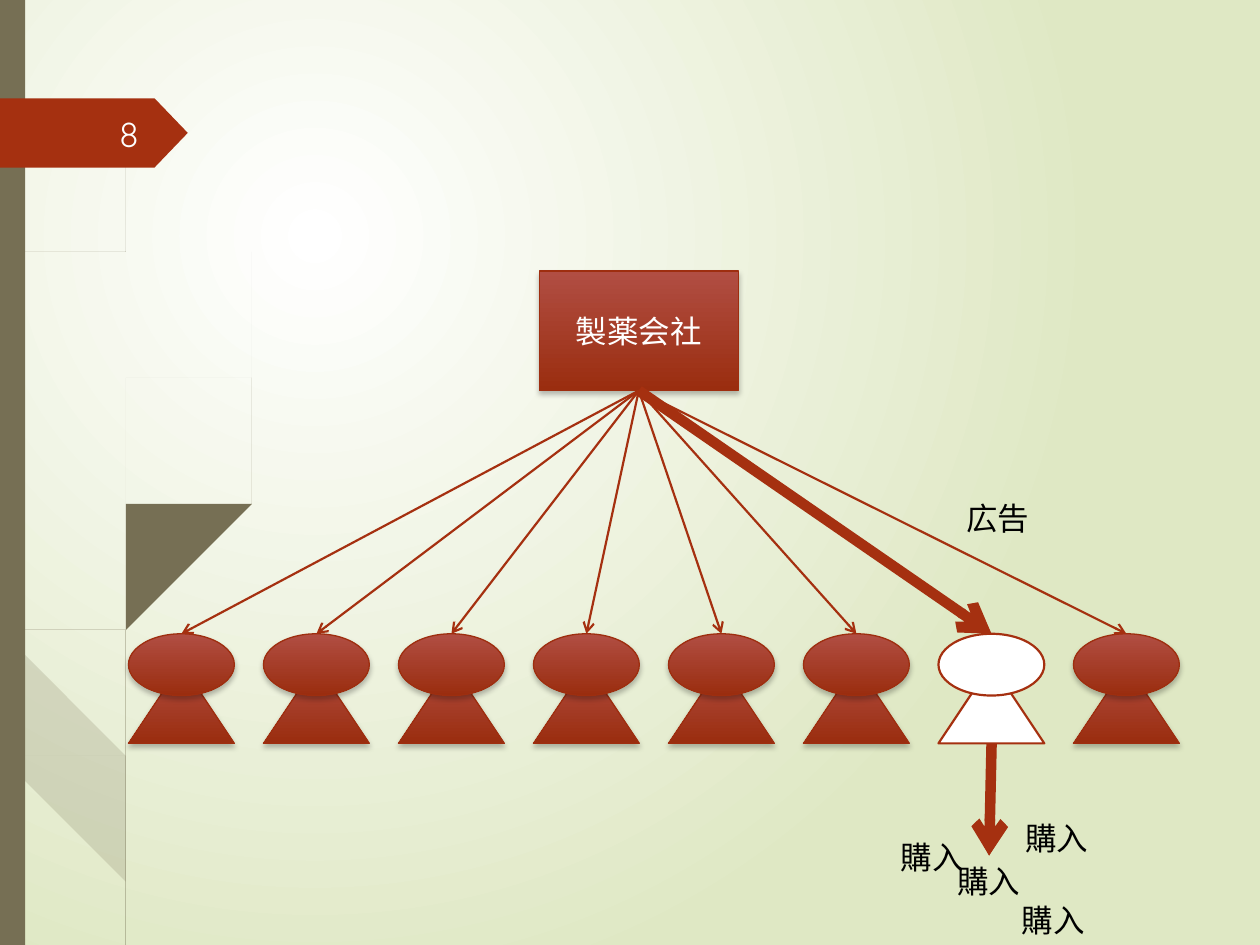
import lxml.etree
import pptx
import pptx.dml.color
import pptx.enum.dml
import pptx.enum.shapes
import pptx.enum.text
import pptx.oxml
import pptx.oxml.ns
import pptx.util

THEME = {
    "font": "Quicksand", "body": 18, "number": 20,
    "paper": "FFFFFF", "edge": "DFE8C4", "olive": "766F54", "accent": "A53010",
    "top": "B14E43", "bottom": "9A2D0F", "outline": "9E2E0F",
    "ink": "000000", "light": "FEFFFF",
}
PRESET = pptx.enum.shapes.MSO_SHAPE
ALIGN = pptx.enum.text.PP_ALIGN
qn = pptx.oxml.ns.qn
color = {name: pptx.dml.color.RGBColor.from_string(value)
         for name, value in THEME.items() if name not in ("font", "body", "number")}
inch = pptx.util.Inches

presentation = pptx.Presentation()
presentation.slide_width = inch(10)
presentation.slide_height = inch(7.5)
slide = presentation.slides.add_slide(presentation.slide_layouts[6])


def paint(shape, fill, line=None, width=0.75):
    shape.shadow.inherit = False
    if fill == "gradient":
        shape.fill.gradient()
        shape.fill.gradient_angle = 270
        for stop, name in zip(shape.fill.gradient_stops, ("top", "bottom")):
            stop.color.rgb = color[name]
        effects = shape._element.spPr.find(qn("a:effectLst"))
        shadow = lxml.etree.SubElement(effects, qn("a:outerShdw"), blurRad="38100",
                                       dist="25400", dir="5400000", rotWithShape="0")
        black = lxml.etree.SubElement(shadow, qn("a:srgbClr"), val=THEME["ink"])
        lxml.etree.SubElement(black, qn("a:alpha"), val="25000")
    else:
        shape.fill.solid()
        shape.fill.fore_color.rgb = color[fill]
    if line:
        shape.line.color.rgb = color[line]
        shape.line.width = pptx.util.Pt(width)
    else:
        shape.line.fill.background()


def write(shape, text, size, ink, align):
    shape.text_frame.text = text
    paragraph = shape.text_frame.paragraphs[0]
    paragraph.alignment = align
    font = paragraph.runs[0].font
    font.name = THEME["font"]
    font.size = pptx.util.Pt(THEME[size])
    font.color.rgb = color[ink]


background = slide.background.fill
background.gradient()
for stop, name in zip(background.gradient_stops, ("paper", "edge")):
    stop.color.rgb = color[name]
gradient = slide._element.cSld.find(".//" + qn("a:gradFill"))
gradient.remove(gradient.find(qn("a:lin")))
radial = lxml.etree.SubElement(gradient, qn("a:path"))
radial.set("path", "circle")
lxml.etree.SubElement(radial, qn("a:fillToRect"), l="50000", t="50000", r="100000", b="100000")

# Each row of a blade of grass is left edge, right edge, height.
blades = [
    (20, [(0, 0.01, 2.9), (0.07, 0.08, 3.5), (0.19, 0.22, 4.7), (0.45, 0.48, 6.2),
          (0.64, 0.67, 6.93), (0.79, 0.83, 7.5)]),
    (20, [(0.1, 0.1, 3.45), (0.12, 0.15, 3.76), (0.4, 0.43, 5.21), (0.57, 0.6, 5.92),
          (0.85, 0.88, 6.93), (1.04, 1.08, 7.5)]),
    (20, [(2.17, 2.17, 1.53), (1.86, 1.87, 1.98), (1.58, 1.59, 2.45), (1.1, 1.11, 3.48),
          (0.75, 0.76, 4.62), (0.59, 0.61, 5.84), (0.6, 0.63, 6.46), (0.69, 0.73, 7.11),
          (0.82, 0.86, 7.5)]),
    (100, [(0.02, 0.03, 0), (0.05, 0.06, 1.1), (0.14, 0.15, 2.33), (0.27, 0.3, 3.55),
           (0.45, 0.49, 4.75), (0.56, 0.6, 5.57), (0.77, 0.81, 6.58), (0.9, 0.95, 7.05),
           (1.05, 1.1, 7.5)]),
    (100, [(0.58, 0.58, 1.41), (0.47, 0.48, 2.45), (0.43, 0.44, 3.49), (0.45, 0.48, 4.51),
           (0.53, 0.56, 5.05), (0.73, 0.77, 5.91), (0.9, 0.94, 6.5), (1.09, 1.13, 7.07),
           (1.26, 1.3, 7.5)]),
    (100, [(2.15, 2.16, 3.44), (1.91, 1.92, 3.74), (1.68, 1.69, 4.06), (1.29, 1.31, 4.75),
           (1.01, 1.03, 5.51), (0.88, 0.91, 6.32), (0.91, 0.95, 6.91), (0.97, 1.01, 7.2),
           (1.08, 1.13, 7.5)]),
]
steps = 6
for opacity, rows in blades:
    padded = [rows[0]] + rows + [rows[-1]]
    smooth = []
    for before, start, end, after in zip(padded, padded[1:], padded[2:], padded[3:]):
        for step in range(steps):
            t = step / steps
            smooth.append([
                b + ((c - a) * t + (2 * a - 5 * b + 4 * c - d) * t ** 2
                     + (3 * b - a - 3 * c + d) * t ** 3) / 2
                for a, b, c, d in zip(before, start, end, after)])
    smooth.append(rows[-1])
    points = [(left, y) for left, right, y in smooth]
    points += [(right, y) for left, right, y in reversed(smooth)]
    builder = slide.shapes.build_freeform(*points[0], scale=inch(1))
    builder.add_line_segments(points[1:], close=True)
    blade = builder.convert_to_shape()
    paint(blade, "olive")
    shade = blade._element.spPr.find(qn("a:solidFill"))[0]
    lxml.etree.SubElement(shade, qn("a:alpha"), val=str(opacity * 1000))

side_bar = slide.shapes.add_shape(PRESET.RECTANGLE, 0, 0, inch(0.2), inch(7.5))
paint(side_bar, "olive")
number_tag = slide.shapes.add_shape(PRESET.PENTAGON, 0, inch(0.78), inch(1.49), inch(0.55))
number_tag.adjustments[0] = 0.48
paint(number_tag, "accent")
number = slide.shapes.add_textbox(inch(0.56), inch(0.86), inch(0.64), inch(0.4))
number.text_frame.word_wrap = True
number.text_frame.vertical_anchor = pptx.enum.text.MSO_ANCHOR.MIDDLE
write(number, "8", "number", "light", ALIGN.RIGHT)

people, buyer = 8, 6
first_column, column = 1.02, 7.5 / 7
person_width, head_row, body_row = 0.84, 5.03, 5.27
heads = []
for index in range(people):
    left = inch(first_column + index * column)
    person = slide.shapes.add_group_shape()
    body = person.shapes.add_shape(PRESET.ISOSCELES_TRIANGLE, left, inch(body_row),
                                   inch(person_width), inch(0.63))
    head = person.shapes.add_shape(PRESET.OVAL, left, inch(head_row),
                                   inch(person_width), inch(0.49))
    for part in (body, head):
        if index == buyer:
            paint(part, "paper", "accent", 1.25)
        else:
            paint(part, "gradient", "outline")
    heads.append(head)

company = slide.shapes.add_shape(PRESET.RECTANGLE, inch(4.28), inch(2.15), inch(1.58), inch(0.95))
paint(company, "gradient", "outline")
company.text_frame.vertical_anchor = pptx.enum.text.MSO_ANCHOR.MIDDLE
write(company, "製薬会社", "body", "paper", ALIGN.CENTER)

arrows = [(head, 1.25) for head in heads]
arrows += [(None, 1.25), (heads[buyer], 6), (None, 6)]
for head, width in arrows:
    arrow = slide.shapes.add_connector(pptx.enum.shapes.MSO_CONNECTOR.STRAIGHT,
                                       inch(7.87), inch(5.9), inch(7.85), inch(6.79))
    if head is not None:
        arrow.begin_connect(company, 2)
        arrow.end_connect(head, 0)
    arrow.line.color.rgb = color["accent"]
    arrow.line.width = pptx.util.Pt(width)
    lxml.etree.SubElement(arrow.line._get_or_add_ln(), qn("a:tailEnd"), type="arrow")
    lxml.etree.SubElement(arrow._element.spPr, qn("a:effectLst"))

labels = [("広告", 7.57, 3.91), ("購入", 7.5, 6.79), ("購入", 8.01, 7.1),
          ("購入", 8.04, 6.45), ("購入", 7.05, 6.6)]
for text, left, top in labels:
    label = slide.shapes.add_textbox(inch(left), inch(top), inch(0.71), inch(0.4))
    label.text_frame.word_wrap = False
    label.text_frame.auto_size = pptx.enum.text.MSO_AUTO_SIZE.SHAPE_TO_FIT_TEXT
    write(label, text, "body", "ink", ALIGN.LEFT)

presentation.save("out.pptx")
